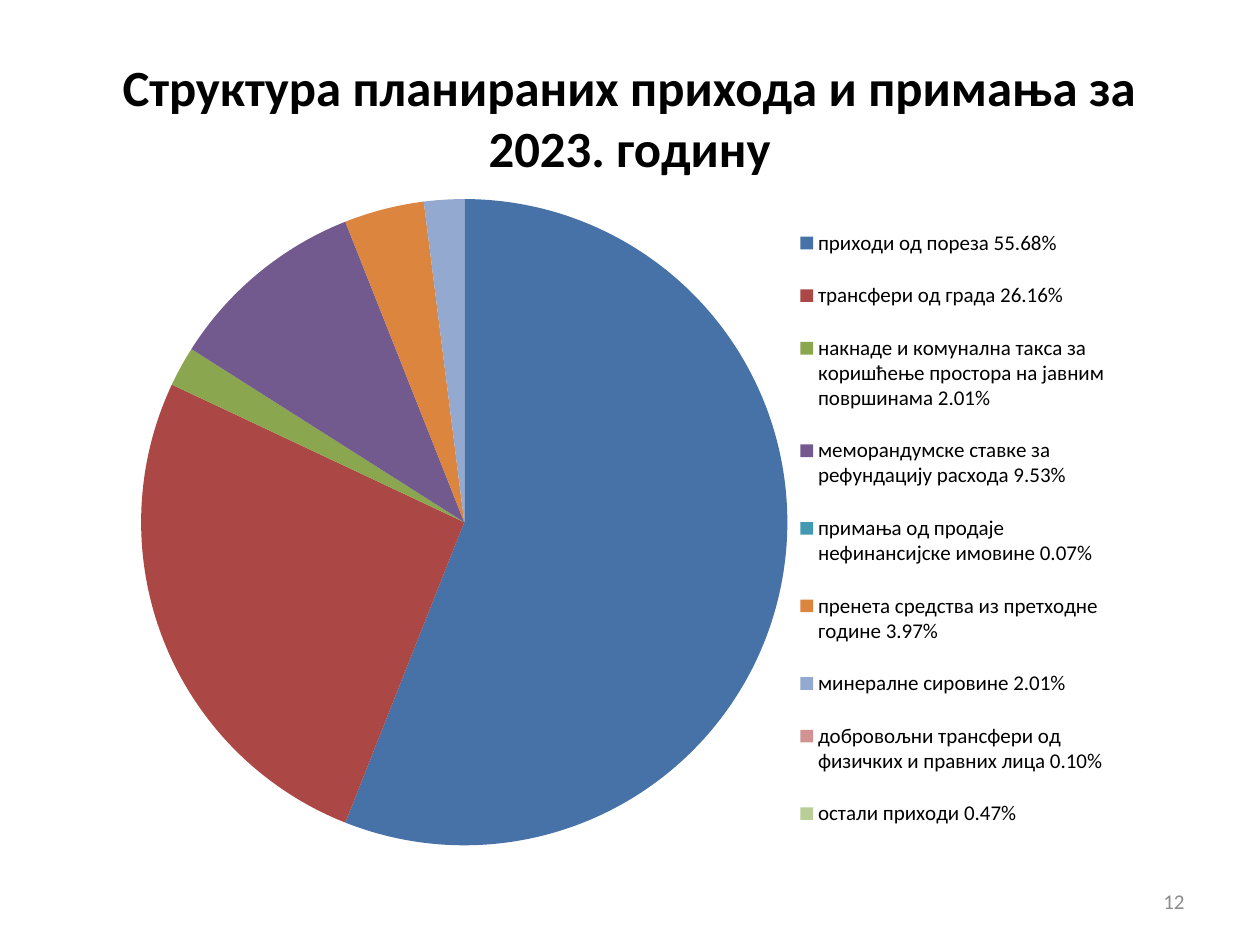
import pptx
import pptx.chart.data
import pptx.dml.color
import pptx.enum.chart
import pptx.enum.text
import pptx.oxml
import pptx.oxml.ns
import pptx.util
from pptx.util import Inches

TITLE = "Структура планираних прихода и примања за 2023. годину"
PAGE_NUMBER = "12"
REVENUES = [
    ("приходи од пореза 55.68%", 56, "4672A8"),
    ("трансфери од града 26.16%", 26, "AB4744"),
    ("накнаде и комунална такса за коришћење простора на јавним површинама 2.01%", 2, "8AA64F"),
    ("меморандумске ставке за рефундацију расхода 9.53%", 10, "725A8F"),
    ("примања од продаје нефинансијске имовине 0.07%", 0, "4299B0"),
    ("пренета средства из претходне године 3.97%", 4, "DC853E"),
    ("минералне сировине 2.01%", 2, "93A9CF"),
    ("добровољни трансфери од физичких и правних лица 0.10%", 0, "D19392"),
    ("остали приходи 0.47%", 0, "B9CD96"),
]
THEME = {
    "font": "Calibri", "ink": "000000", "muted": "8C8C8C",
    "title": 29, "chart": 18, "small": 12,
}
CHART_BOX = (0.98, 1.39, 8.01, 5.51)
PIE_BOX = (1.12, 1.58, 5.13, 5.13)
LEGEND_BOX = (6.28, 1.61, 2.56, 5.17)


def rgb(color):
    return pptx.dml.color.RGBColor.from_string(color)


def style_font(font, size, color, bold=False):
    font.name = THEME["font"]
    font.size = pptx.util.Pt(size)
    font.bold = bold
    font.color.rgb = rgb(color)


def add_text(slide, text, *, box, size, color, align, bold=False):
    frame = slide.shapes.add_textbox(*map(Inches, box)).text_frame
    frame.word_wrap = True
    frame.vertical_anchor = pptx.enum.text.MSO_ANCHOR.MIDDLE
    paragraph = frame.paragraphs[0]
    paragraph.alignment = align
    run = paragraph.add_run()
    run.text = text
    style_font(run.font, size, color, bold)


def make_layout(box, inner=False):
    left, top, width, height = box
    chart_left, chart_top, chart_width, chart_height = CHART_BOX
    area = {
        "x": (left - chart_left) / chart_width,
        "y": (top - chart_top) / chart_height,
        "w": width / chart_width,
        "h": height / chart_height,
    }
    target = '<c:layoutTarget val="inner"/>' if inner else ""
    modes = "".join(f'<c:{axis}Mode val="edge"/>' for axis in "xy")
    sizes = "".join(f'<c:{side} val="{value:.4f}"/>' for side, value in area.items())
    return pptx.oxml.parse_xml(
        f'<c:layout {pptx.oxml.ns.nsdecls("c")}><c:manualLayout>'
        f"{target}{modes}{sizes}</c:manualLayout></c:layout>"
    )


def add_revenue_pie(slide):
    data = pptx.chart.data.CategoryChartData(number_format="0")
    data.categories = [label for label, _, _ in REVENUES]
    data.add_series("Series 1", [share for _, share, _ in REVENUES])
    chart = slide.shapes.add_chart(
        pptx.enum.chart.XL_CHART_TYPE.PIE, *map(Inches, CHART_BOX), data,
    ).chart
    chart.has_title = False
    style_font(chart.font, THEME["chart"], THEME["ink"])

    pie = chart.plots[0]
    pie.vary_by_categories = True
    for index, (_, _, color) in enumerate(REVENUES):
        fill = pie.series[0].points[index].format.fill
        fill.solid()
        fill.fore_color.rgb = rgb(color)

    chart.has_legend = True
    legend = chart.legend
    legend.position = pptx.enum.chart.XL_LEGEND_POSITION.RIGHT
    legend.include_in_layout = False
    style_font(legend.font, THEME["small"], THEME["ink"])

    qn = pptx.oxml.ns.qn
    plot_area = chart.element.find(".//" + qn("c:plotArea"))
    legend_area = chart.element.find(".//" + qn("c:legend"))
    for part in (plot_area, legend_area):
        for old in part.findall(qn("c:layout")):
            part.remove(old)
    plot_area.insert(0, make_layout(PIE_BOX, inner=True))
    legend_area.insert(1, make_layout(LEGEND_BOX))


def main():
    deck = pptx.Presentation()
    deck.slide_width, deck.slide_height = Inches(10), Inches(7.5)
    slide = deck.slides.add_slide(deck.slide_layouts[6])
    add_text(slide, TITLE, box=(0.5, 0.3, 9, 1.25), size=THEME["title"],
             color=THEME["ink"], align=pptx.enum.text.PP_ALIGN.CENTER, bold=True)
    add_text(slide, PAGE_NUMBER, box=(7.17, 6.95, 2.33, 0.4), size=THEME["small"],
             color=THEME["muted"], align=pptx.enum.text.PP_ALIGN.RIGHT)
    add_revenue_pie(slide)
    deck.save("out.pptx")


if __name__ == "__main__":
    main()
